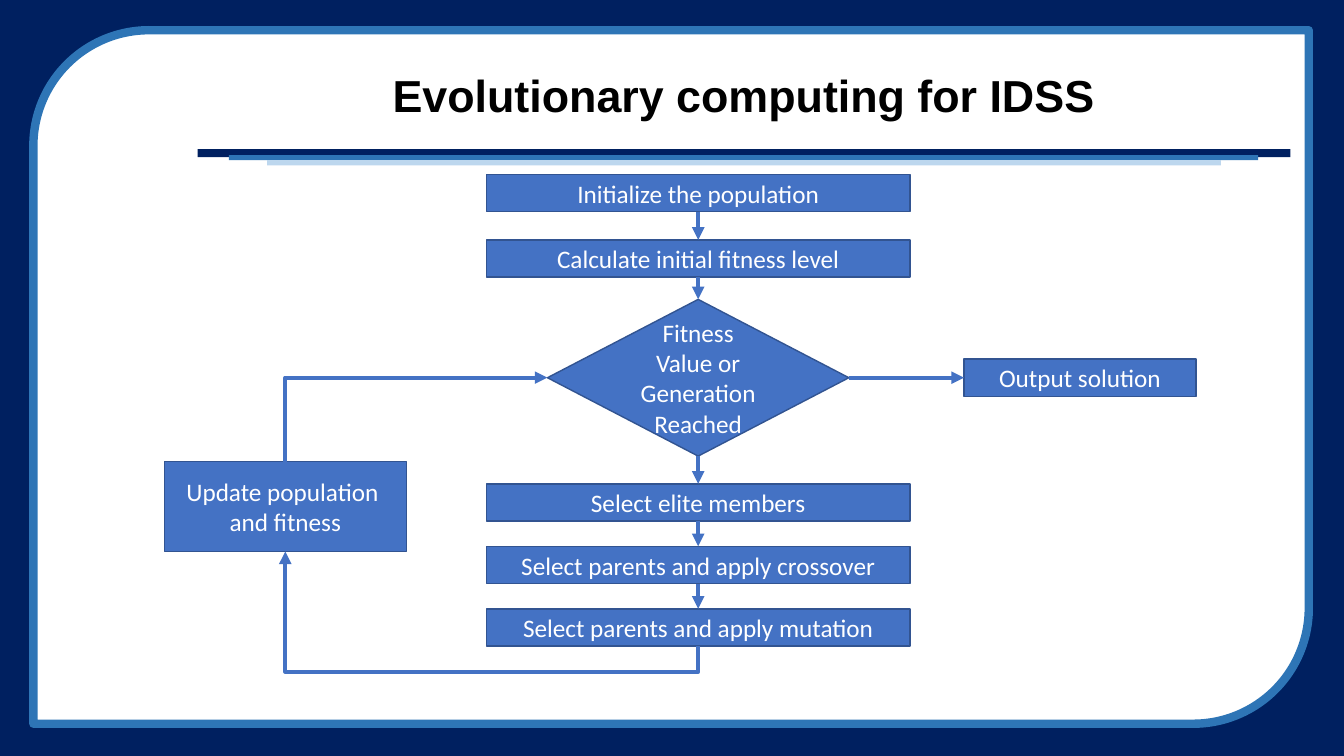
from dataclasses import dataclass

from lxml.etree import SubElement
from pptx import Presentation
from pptx.dml.color import RGBColor
from pptx.enum.shapes import MSO_CONNECTOR, MSO_SHAPE
from pptx.enum.text import MSO_ANCHOR, PP_ALIGN
from pptx.oxml.ns import qn
from pptx.util import Inches, Pt

TOP, LEFT, BOTTOM, RIGHT = range(4)


@dataclass(frozen=True)
class Theme:
    navy: str = "002060"
    frame: str = "2E75B6"
    pale: str = "BDD7EE"
    paper: str = "FFFFFF"
    ink: str = "000000"
    node: str = "4472C4"
    node_edge: str = "325491"
    title_font: str = "Arial"
    body_font: str = "Calibri"
    title_size: int = 32
    body_size: int = 18
    frame_width: int = 6
    edge_width: int = 1
    arrow_width: int = 3


class FlowSlide:
    def __init__(self, deck, theme):
        self.deck = deck
        self.theme = theme
        self.page = deck.slides.add_slide(deck.slide_layouts[6])

    def place(self, left, top, width, height):
        across, down = self.deck.slide_width / 100, self.deck.slide_height / 100
        return [round(length) for length in
                (left * across, top * down, width * across, height * down)]

    def panel(self, area, fill, edge=None, edge_width=0, kind=MSO_SHAPE.RECTANGLE):
        shape = self.page.shapes.add_shape(kind, *self.place(*area))
        shape.shadow.inherit = False
        shape.fill.solid()
        shape.fill.fore_color.rgb = RGBColor.from_string(fill)
        if edge:
            shape.line.color.rgb = RGBColor.from_string(edge)
            shape.line.width = Pt(edge_width)
        else:
            shape.line.fill.background()
        return shape

    def label(self, box, lines, font, size, color, bold=False, spacing=1.0):
        frame = box.text_frame
        frame.word_wrap = True
        frame.vertical_anchor = MSO_ANCHOR.MIDDLE
        for index, line in enumerate(lines):
            para = frame.add_paragraph() if index else frame.paragraphs[0]
            para.alignment = PP_ALIGN.CENTER
            para.line_spacing = spacing
            span = para.add_run()
            span.text = line
            span.font.name = font
            span.font.size = Pt(size)
            span.font.bold = bold
            span.font.color.rgb = RGBColor.from_string(color)

    def title(self, area, text):
        theme = self.theme
        box = self.page.shapes.add_textbox(*self.place(*area))
        self.label(box, [text], theme.title_font, theme.title_size, theme.ink, True, 0.9)

    def node(self, center, top, width, height, *lines, kind=MSO_SHAPE.RECTANGLE):
        theme = self.theme
        area = (center - width / 2, top, width, height)
        box = self.panel(area, theme.node, theme.node_edge, theme.edge_width, kind)
        self.label(box, lines, theme.body_font, theme.body_size, theme.paper)
        return box

    def arrow(self, source, source_site, target, target_site, kind=MSO_CONNECTOR.STRAIGHT):
        connector = self.page.shapes.add_connector(kind, 0, 0, 0, 0)
        connector.begin_connect(source, source_site)
        connector.end_connect(target, target_site)
        connector.line.color.rgb = RGBColor.from_string(self.theme.node)
        connector.line.width = Pt(self.theme.arrow_width)
        properties = connector._element.spPr
        SubElement(properties.find(qn("a:ln")), qn("a:tailEnd"), type="triangle")
        SubElement(properties, qn("a:effectLst"))
        return connector

    def upward_elbow(self, source, source_site, target, target_site, preset, bend=None):
        connector = self.arrow(source, source_site, target, target_site, MSO_CONNECTOR.ELBOW)
        goes_right = connector.end_x > connector.begin_x
        width, height = connector.width, connector.height
        left = connector.left + (width - height) // 2
        top = connector.top + (height - width) // 2
        connector.left, connector.top = left, top
        connector.width, connector.height = height, width
        properties = connector._element.spPr
        transform = properties.find(qn("a:xfrm"))
        transform.set("rot", str(90 * 60000))
        transform.set("flipH", "1")
        transform.set("flipV", str(int(goes_right)))
        geometry = properties.find(qn("a:prstGeom"))
        geometry.set("prst", preset)
        if bend is not None:
            guides = geometry.find(qn("a:avLst"))
            SubElement(guides, qn("a:gd"), name="adj1", fmla=f"val {round(bend * 100000)}")


def main():
    deck = Presentation()
    deck.slide_width, deck.slide_height = Inches(13.33), Inches(7.5)
    theme = Theme()
    slide = FlowSlide(deck, theme)

    slide.panel((0, 0, 100, 100), theme.navy)
    slide.panel((2.48, 4, 94.9, 91.73), theme.paper, theme.frame, theme.frame_width,
                MSO_SHAPE.ROUND_2_DIAG_RECTANGLE)
    slide.panel((14.7, 19.73, 81.32, 1.07), theme.navy)
    slide.panel((17.03, 20.53, 76.59, 0.67), theme.frame)
    slide.panel((19.88, 21.2, 70.97, 0.67), theme.pale)
    slide.title((14.7, 6.53, 81.32, 12.93), "Evolutionary computing for IDSS")

    spine, step_width, step_height = 51.95, 31.5, 4.93

    def steps(first, pitch, labels):
        return [slide.node(spine, first + row * pitch, step_width, step_height, label)
                for row, label in enumerate(labels)]

    setup = steps(23.07, 8.66, ["Initialize the population", "Calculate initial fitness level"])
    decision = slide.node(spine, 39.6, 22.43, 20.73, "Fitness Value or Generation Reached",
                          kind=MSO_SHAPE.DIAMOND)
    breeding = steps(64, 8.27, ["Select elite members", "Select parents and apply crossover",
                                "Select parents and apply mutation"])
    output = slide.node(80.35, 47.5, 17.25, step_height, "Output solution")
    update = slide.node(21.23, 61.07, 18, 11.87, "Update population ", "and fitness")

    chain = [*setup, decision, *breeding]
    for source, target in zip(chain, chain[1:]):
        slide.arrow(source, BOTTOM, target, TOP)
    slide.arrow(decision, RIGHT, output, LEFT)
    slide.upward_elbow(breeding[-1], BOTTOM, update, BOTTOM, "bentConnector3", -0.27)
    slide.upward_elbow(update, TOP, decision, LEFT, "bentConnector2")

    deck.save("out.pptx")


if __name__ == "__main__":
    main()
